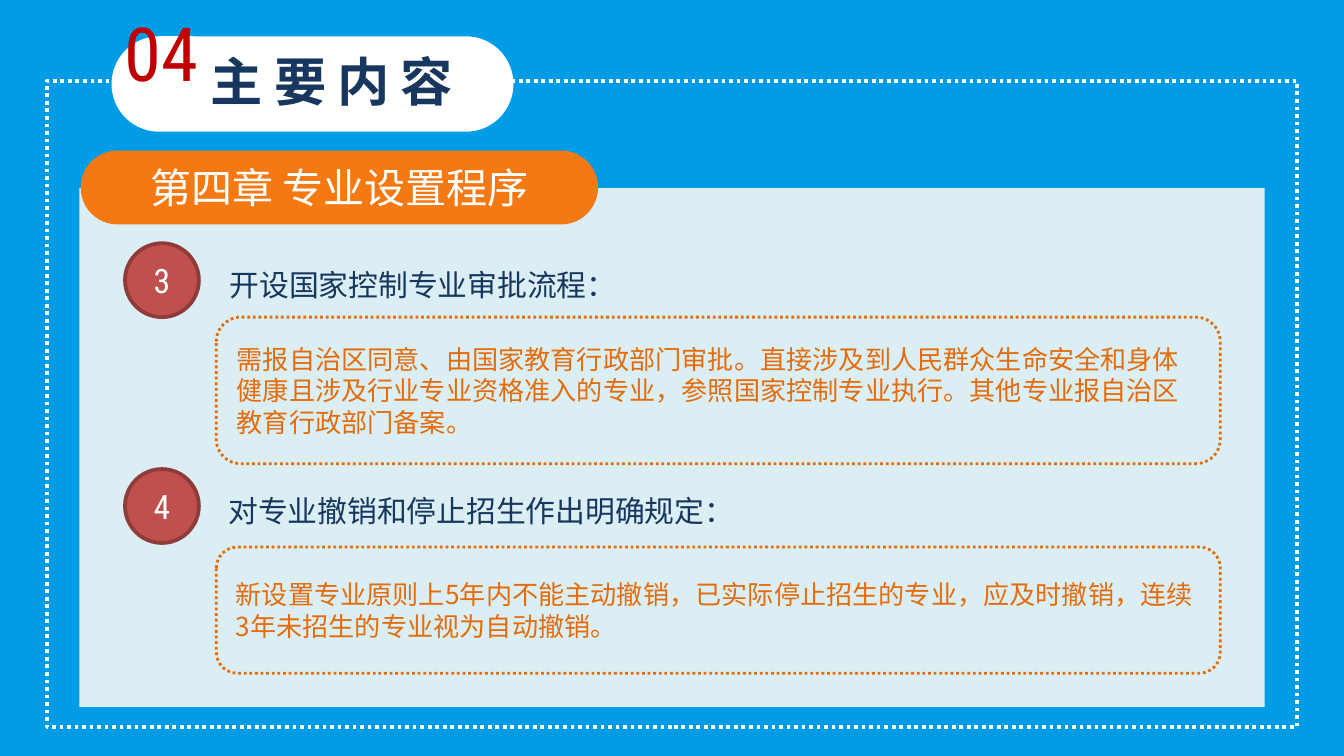
from lxml import etree
from pptx import Presentation
from pptx import util as u
from pptx.dml.color import RGBColor
from pptx.enum import dml, shapes, text
from pptx.oxml import ns

INK = {
    "sky": "009CE5", "white": "FFFFFF", "red": "C00000", "navy": "17375E",
    "pale": "DBEEF4", "orange": "F57913", "rust": "E46C0A",
    "brick": "C0504D", "wine": "8E3B39",
}
HAN = "Noto Sans CJK SC"
NUM = "Roboto Condensed"
KIND = shapes.MSO_SHAPE
MID = text.PP_ALIGN.CENTER


def hue(name):
    return RGBColor.from_string(INK[name])


def place(box):
    return [u.Inches(v) for v in box]


def shape(slide, kind, box, fill=None, line=None, width=2, dots=False):
    item = slide.shapes.add_shape(kind, *place(box))
    item.shadow.inherit = False
    if fill:
        item.fill.solid()
        item.fill.fore_color.rgb = hue(fill)
    else:
        item.fill.background()
    if line:
        item.line.color.rgb = hue(line)
        item.line.width = u.Pt(width)
        if dots:
            item.line.dash_style = dml.MSO_LINE.ROUND_DOT
    else:
        item.line.fill.background()
    return item


def write(item, words, size, color, font=HAN, align=text.PP_ALIGN.LEFT, bold=None):
    frame = item.text_frame
    frame.word_wrap = True
    frame.vertical_anchor = text.MSO_ANCHOR.MIDDLE
    para = frame.paragraphs[0]
    para.alignment = align
    run = para.add_run()
    run.text = words
    run.font.size = u.Pt(size)
    run.font.bold = bold
    run.font.color.rgb = hue(color)
    run.font.name = font
    props = run.font._element
    etree.SubElement(props, ns.qn("a:ea")).set("typeface", font)
    return para, props


def label(slide, box, words, size, color, **style):
    item = slide.shapes.add_textbox(*place(box))
    para, props = write(item, words, size, color, **style)
    item.text_frame.vertical_anchor = text.MSO_ANCHOR.TOP
    item.text_frame.auto_size = text.MSO_AUTO_SIZE.SHAPE_TO_FIT_TEXT
    return item, para, props


def pill(slide, box, fill):
    item = shape(slide, KIND.ROUNDED_RECTANGLE, box, fill)
    item.adjustments[0] = 0.5
    return item


def header(slide, box):
    x, y, w, h = box
    pill(slide, box, "white")
    item, para, props = label(slide, (x, y - 0.27, 0.78, 0.77), "04", 40, "red", font=NUM)
    item.text_frame.word_wrap = False
    edge = etree.Element(ns.qn("a:ln"), w=str(u.Pt(2.25)))
    paint = etree.SubElement(edge, ns.qn("a:solidFill"))
    etree.SubElement(paint, ns.qn("a:srgbClr"), val=INK["white"])
    props.insert(0, edge)
    item, para, props = label(
        slide, (x + 0.64, y + 0.05, 2.17, 0.57), "主要内容", 28, "navy", bold=True)
    props.set("spc", "600")


def panel(slide, box, title):
    x, y, w, h = box
    shape(slide, KIND.RECTANGLE, box, "pale")
    tab = pill(slide, (x + 0.01, y - 0.28, 3.85, 0.55), "orange")
    write(tab, title, 22, "white", align=MID)


def topic(slide, box, mark, title, body, gap, top):
    x, y, w, h = box
    disc = shape(slide, KIND.OVAL, (x, y, 0.55, 0.55), "brick", "wine")
    write(disc, mark, 18, "white", font=NUM, align=MID)
    item, para, props = label(
        slide, (x + gap, y + 0.06, 7.48, 0.41), title, 16, "navy")
    para.line_spacing = u.Pt(24)
    note = shape(slide, KIND.ROUNDED_RECTANGLE, (x + 0.68, y + top, w - 0.68, h - top),
                 line="rust", width=1.5, dots=True)
    write(note, body, 14, "rust")


def main():
    deck = Presentation()
    deck.slide_width = u.Inches(10)
    deck.slide_height = deck.slide_width * 9 // 16
    slide = deck.slides.add_slide(deck.slide_layouts[6])
    slide.background.fill.solid()
    slide.background.fill.fore_color.rgb = hue("sky")
    shape(slide, KIND.RECTANGLE, (0.35, 0.6, 9.3, 4.81), line="white", dots=True)
    header(slide, (0.83, 0.27, 2.99, 0.71))
    panel(slide, (0.59, 1.4, 8.82, 3.86), "第四章 专业设置程序")
    topic(slide, (0.93, 1.81, 8.15, 1.64), "3", "开设国家控制专业审批流程：",
          "需报自治区同意、由国家教育行政部门审批。直接涉及到人民群众生命安全和身体健康"
          "且涉及行业专业资格准入的专业，参照国家控制专业执行。其他专业报自治区教育行政部门备案。",
          0.68, 0.55)
    topic(slide, (0.93, 3.49, 8.15, 1.52), "4", "对专业撤销和停止招生作出明确规定：",
          "新设置专业原则上5年内不能主动撤销，已实际停止招生的专业，应及时撤销，"
          "连续3年未招生的专业视为自动撤销。", 0.67, 0.58)
    deck.save("out.pptx")


if __name__ == "__main__":
    main()
